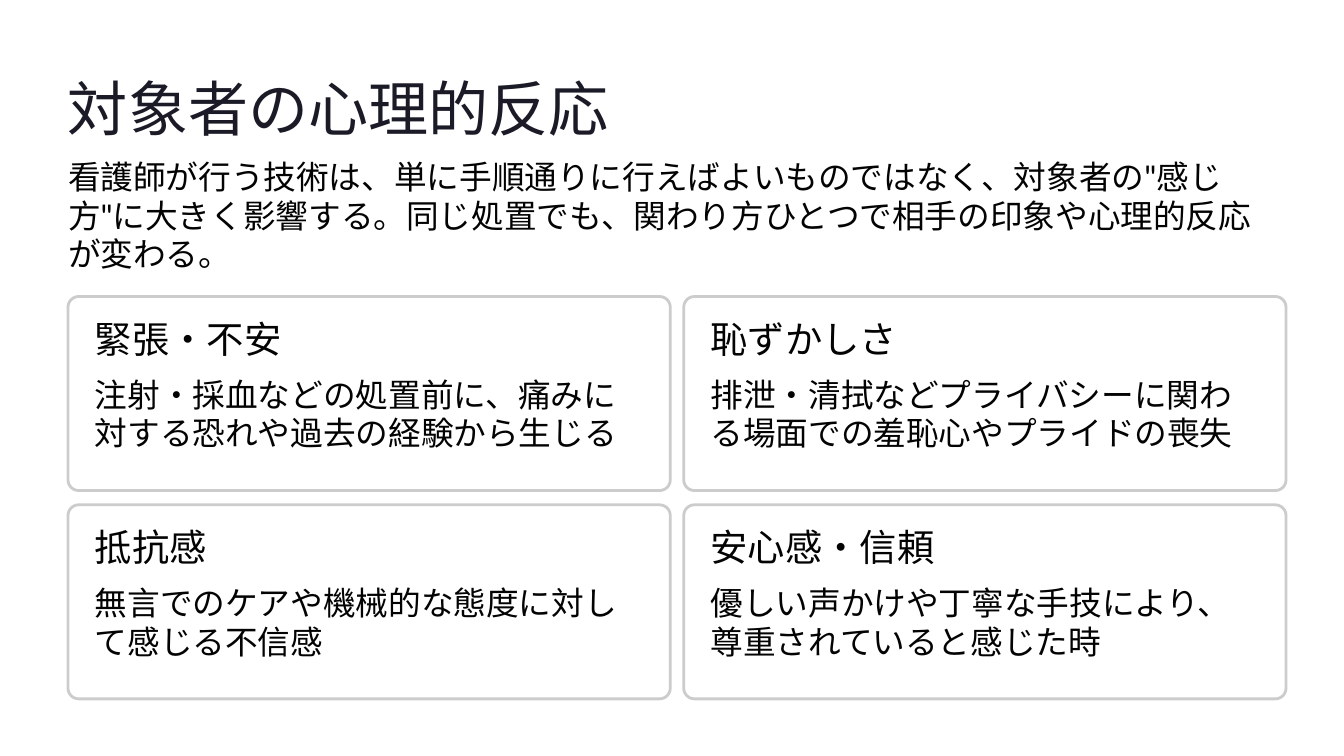
import dataclasses

import pptx
import pptx.dml.color
import pptx.enum.shapes
import pptx.enum.text
import pptx.oxml
import pptx.oxml.ns
import pptx.slide
import pptx.util

EMU_PER_PX = 9144


@dataclasses.dataclass(frozen=True)
class TextStyle:
    font: str
    size: float
    line_height: float
    color: str
    wrap: bool


@dataclasses.dataclass(frozen=True)
class Theme:
    heading: TextStyle = TextStyle("Inter", 51.5, 64.5, "1B1B27", False)
    body: TextStyle = TextStyle("Lato", 28, 33, "030303", True)
    card_heading: TextStyle = TextStyle("Inter", 32, 32, "030303", False)
    card_fill: str = "FFFFFF"
    card_opacity: int = 95
    card_border: str = "CCCCCC"
    card_border_width: float = 2.4
    card_rounding: float = 0.055


@dataclasses.dataclass(frozen=True)
class Box:
    left: int
    top: int
    width: int
    height: int

    def emu(self) -> tuple[int, int, int, int]:
        return tuple(value * EMU_PER_PX for value in dataclasses.astuple(self))


@dataclasses.dataclass(frozen=True)
class Reaction:
    name: str
    cause: str


THEME = Theme()
MARGIN = 81
CARDS_TOP = 353
CARD_WIDTH, CARD_HEIGHT = 717, 231
CARD_GAP_X, CARD_GAP_Y = 16, 17
CARD_PADDING = 32
CAUSE_OFFSET = 94
COLUMNS = 2

HEADING = "対象者の心理的反応"
INTRO = (
    "看護師が行う技術は、単に手順通りに行えばよいものではなく、"
    "対象者の\"感じ方\"に大きく影響する。"
    "同じ処置でも、関わり方ひとつで相手の印象や心理的反応が変わる。"
)
REACTIONS = [
    Reaction("緊張・不安", "注射・採血などの処置前に、痛みに対する恐れや過去の経験から生じる"),
    Reaction("恥ずかしさ", "排泄・清拭などプライバシーに関わる場面での羞恥心やプライドの喪失"),
    Reaction("抵抗感", "無言でのケアや機械的な態度に対して感じる不信感"),
    Reaction("安心感・信頼", "優しい声かけや丁寧な手技により、尊重されていると感じた時"),
]


def rgb(color: str) -> pptx.dml.color.RGBColor:
    return pptx.dml.color.RGBColor.from_string(color)


def add_text(slide: pptx.slide.Slide, box: Box, text: str, style: TextStyle) -> None:
    frame = slide.shapes.add_textbox(*box.emu()).text_frame
    frame.margin_left = frame.margin_top = frame.margin_right = frame.margin_bottom = 0
    frame.word_wrap = style.wrap
    frame.vertical_anchor = pptx.enum.text.MSO_ANCHOR.TOP
    frame.text = text
    paragraph = frame.paragraphs[0]
    paragraph.line_spacing = pptx.util.Pt(style.line_height)
    font = paragraph.runs[0].font
    font.name = style.font
    font.size = pptx.util.Pt(style.size)
    font.color.rgb = rgb(style.color)


def add_card(slide: pptx.slide.Slide, left: int, top: int, reaction: Reaction) -> None:
    card = slide.shapes.add_shape(
        pptx.enum.shapes.MSO_SHAPE.ROUNDED_RECTANGLE,
        *Box(left, top, CARD_WIDTH, CARD_HEIGHT).emu(),
    )
    card.adjustments[0] = THEME.card_rounding
    card.shadow.inherit = False
    card.fill.solid()
    card.fill.fore_color.rgb = rgb(THEME.card_fill)
    fill_color = card.fill._xPr.find(".//" + pptx.oxml.ns.qn("a:srgbClr"))
    alpha = pptx.oxml.parse_xml(
        f'<a:alpha {pptx.oxml.ns.nsdecls("a")} val="{THEME.card_opacity * 1000}"/>'
    )
    fill_color.append(alpha)
    card.line.color.rgb = rgb(THEME.card_border)
    card.line.width = pptx.util.Pt(THEME.card_border_width)

    text_left, text_top = left + CARD_PADDING, top + CARD_PADDING
    add_text(slide, Box(text_left, text_top, 366, 48), reaction.name, THEME.card_heading)
    add_text(slide, Box(text_left, top + CAUSE_OFFSET, 652, 97), reaction.cause, THEME.body)


def main() -> None:
    presentation = pptx.Presentation()
    presentation.slide_width = 1600 * EMU_PER_PX
    presentation.slide_height = 900 * EMU_PER_PX
    slide = presentation.slides.add_slide(presentation.slide_layouts[6])

    add_text(slide, Box(MARGIN, 81, 720, 90), HEADING, THEME.heading)
    add_text(slide, Box(MARGIN, 188, 1439, 92), INTRO, THEME.body)
    for index, reaction in enumerate(REACTIONS):
        row, column = divmod(index, COLUMNS)
        left = MARGIN + column * (CARD_WIDTH + CARD_GAP_X)
        top = CARDS_TOP + row * (CARD_HEIGHT + CARD_GAP_Y)
        add_card(slide, left, top, reaction)

    presentation.save("out.pptx")


if __name__ == "__main__":
    main()
